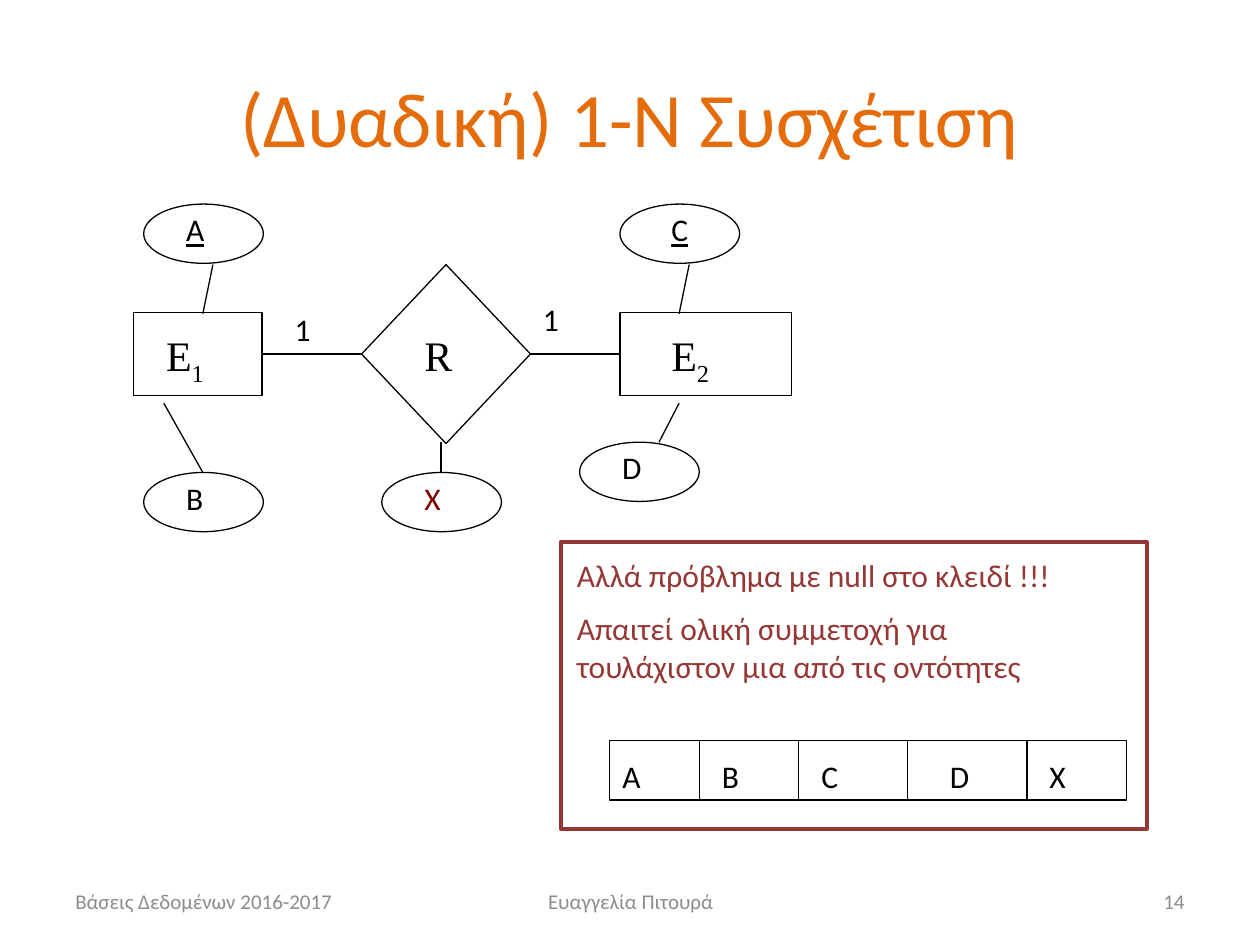
from lxml import etree
from pptx import Presentation, util as u
from pptx.dml.color import RGBColor
from pptx.enum import shapes, text
from pptx.oxml.ns import qn

KIND = shapes.MSO_SHAPE
ALIGN = text.PP_ALIGN
BLACK, ORANGE, BRICK, MAROON, GREY = "000000", "E46C0A", "953735", "800000", "8C8C8C"


def colour(value):
    return RGBColor.from_string(value)


def inches(*values):
    return [u.Inches(value) for value in values]


class Diagram:
    """Holds the style and the current slide."""

    font = "Calibri"
    entity_font = {"name": "Times New Roman", "size": u.Pt(24)}

    def __init__(self, page):
        self.page = page

    def style_line(self, item, ink, width):
        item.line.color.rgb = colour(ink)
        item.line.width = u.Pt(width)

    def shape(self, kind, left, top, width, height, ink=BLACK, weight=0.75):
        box = self.page.shapes.add_shape(kind, *inches(left, top, width, height))
        box.shadow.inherit = False
        box.fill.background()
        self.style_line(box, ink, weight)
        return box

    def line(self, start=(0, 0), end=(0, 0), joins=None):
        link = self.page.shapes.add_connector(
            shapes.MSO_CONNECTOR.STRAIGHT, *inches(*start, *end))
        if joins:
            first, second = joins
            link.begin_connect(first, 3)
            link.end_connect(second, 1)
        self.style_line(link, BLACK, 0.75)
        etree.SubElement(link._element.spPr, qn("a:effectLst"))

    def span(self, para, words, ink, baseline=None, **font):
        span = para.add_run()
        span.text = words
        formats = {"name": self.font, "size": u.Pt(18), **font}
        for name, value in formats.items():
            setattr(span.font, name, value)
        span.font.color.rgb = colour(ink)
        if baseline:
            span.font._element.set("baseline", str(baseline))

    def text(self, paragraphs, left, top, width, height=0.4, ink=BLACK, sub=None,
             align=ALIGN.LEFT, anchor=text.MSO_ANCHOR.TOP, **font):
        box = self.page.shapes.add_textbox(*inches(left, top, width, height))
        frame = box.text_frame
        frame.word_wrap = True
        frame.vertical_anchor = anchor
        for index, words in enumerate(paragraphs):
            para = frame.add_paragraph() if index else frame.paragraphs[0]
            para.alignment = align
            if index:
                para.space_before = u.Pt(9)
            self.span(para, words, ink, **font)
            if sub:
                self.span(para, sub, ink, baseline=-25000, **font)

    def entity(self, kind, label, label_at, frame, sub=None):
        box = self.shape(kind, *frame)
        self.text([label], *label_at, 0.5, sub=sub, **self.entity_font)
        return box

    def attribute(self, label, left, top, indent=0.24, ink=BLACK, key=False):
        self.shape(KIND.OVAL, left, top, 0.95, 0.47)
        self.text([label], left + indent, top, 0.7, ink=ink, underline=key or None)


def main():
    deck = Presentation()
    deck.slide_width, deck.slide_height = inches(10, 7.5)
    page = deck.slides.add_slide(deck.slide_layouts[6])
    diagram = Diagram(page)
    middle = text.MSO_ANCHOR.MIDDLE

    # Title and footer
    diagram.text(["(Δυαδική) 1-Ν Συσχέτιση"], 0.5, 0.3, 9, 1.25, ORANGE,
                 align=ALIGN.CENTER, anchor=middle, size=u.Pt(44))
    for words, left, width, align in (
            ("Βάσεις Δεδομένων 2016-2017", 0.5, 2.33, ALIGN.LEFT),
            ("Ευαγγελία Πιτουρά", 3.42, 3.17, ALIGN.CENTER),
            ("14", 7.17, 2.33, ALIGN.RIGHT)):
        diagram.text([words], left, 6.95, width, ink=GREY, align=align,
                     anchor=middle, size=u.Pt(12))

    # Entities and the relationship between them
    process = KIND.FLOWCHART_PROCESS
    first = diagram.entity(process, "E", (1.22, 2.57, 0.94), (1.06, 2.48, 1.02, 0.66), "1")
    relation = diagram.entity(KIND.FLOWCHART_DECISION, "R", (3.27, 2.57, 1.42),
                              (2.87, 2.1, 1.34, 1.42))
    second = diagram.entity(process, "E", (5.23, 2.57, 1.1), (4.92, 2.48, 1.36, 0.66), "2")
    diagram.line(joins=(first, relation))
    diagram.line(joins=(relation, second))
    for left, top in ((2.24, 2.41), (4.21, 2.33)):
        diagram.text(["1"], left, top, 0.5)

    # Attributes and their links
    diagram.attribute("A", 1.14, 1.62, key=True)
    diagram.attribute("B", 1.14, 3.75)
    diagram.attribute("C", 4.92, 1.62, indent=0.31, key=True)
    diagram.attribute("D", 4.6, 3.51)
    diagram.attribute("X", 3.03, 3.75, ink=MAROON)
    for start, end in (((1.69, 2.1), (1.61, 2.49)), ((1.3, 3.2), (1.61, 3.75)),
                       ((5.47, 2.1), (5.39, 2.49)), ((5.39, 3.2), (5.23, 3.51)),
                       ((3.5, 3.51), (3.5, 3.75))):
        diagram.line(start, end)

    # Remark with the merged relation
    diagram.shape(KIND.RECTANGLE, 4.45, 4.3, 4.65, 2.28, BRICK, 2.25)
    diagram.text(["Αλλά πρόβλημα με null στο κλειδί !!!",
                  "Απαιτεί ολική συμμετοχή για τουλάχιστον μια από τις οντότητες"],
                 4.48, 4.36, 4.43, 1.15, BRICK)
    top, height = 5.88, 0.47
    diagram.shape(KIND.RECTANGLE, 4.84, top, 4.1, height)
    for label, left in zip("ABCDX", (4.84, 5.63, 6.42, 7.44, 8.23)):
        diagram.text([label], left, top + 0.08, 0.55)
    for divider in (5.55, 6.34, 7.2, 8.15):
        diagram.line((divider, top), (divider, top + height))

    deck.save("out.pptx")


if __name__ == "__main__":
    main()
